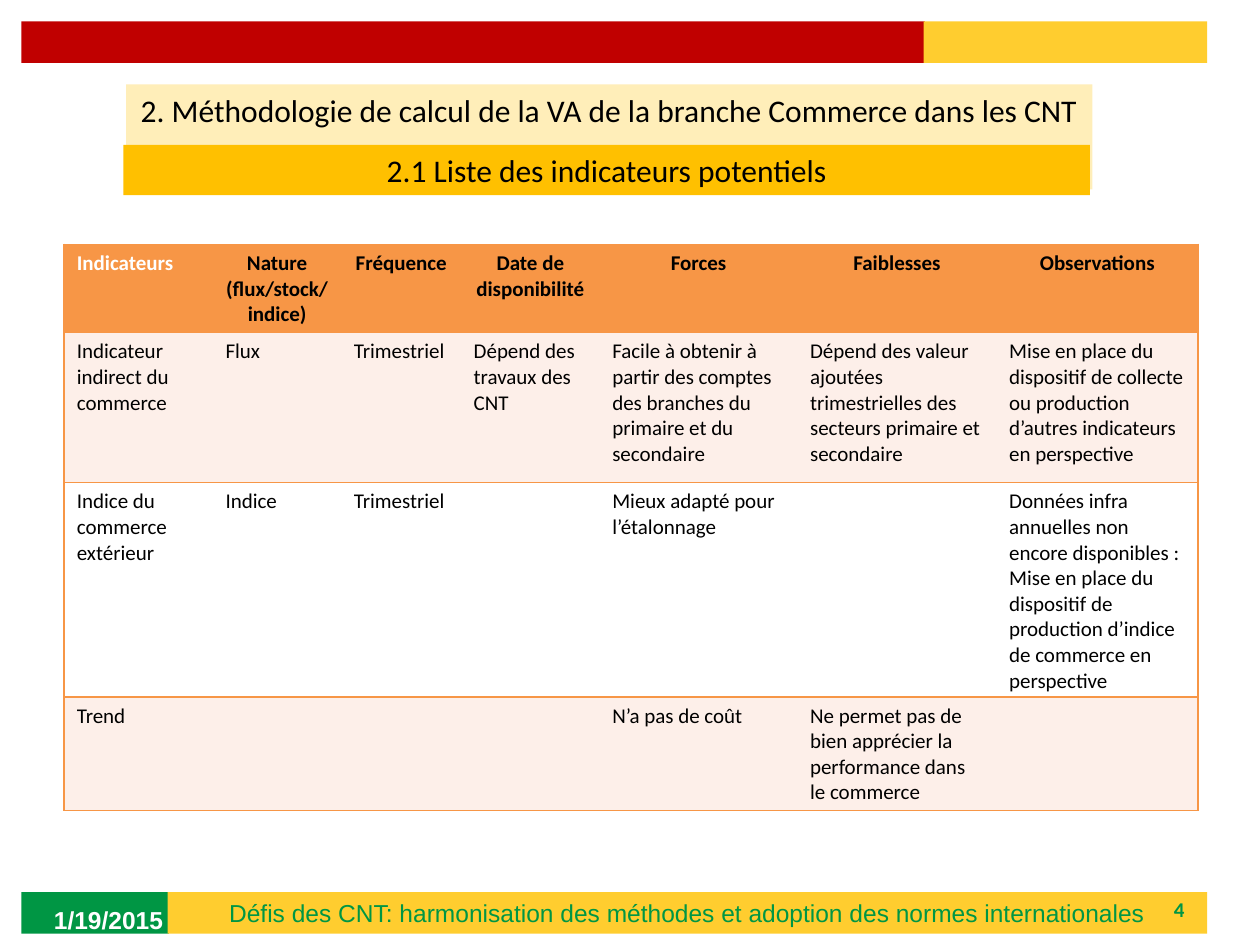
from lxml.etree import SubElement
from pptx import Presentation
from pptx.dml.color import RGBColor
from pptx.enum.shapes import MSO_SHAPE
from pptx.enum.text import MSO_ANCHOR, MSO_AUTO_SIZE, PP_ALIGN
from pptx.oxml.ns import qn
from pptx.util import Inches, Pt

GREEN = RGBColor(0x00, 0x96, 0x44)
YELLOW = RGBColor(0xFF, 0xCD, 0x2F)
RED = RGBColor(0xC0, 0x00, 0x00)
CREAM = RGBColor(0xFF, 0xEE, 0xB9)
AMBER = RGBColor(0xFF, 0xC0, 0x00)
ORANGE = RGBColor(0xF7, 0x96, 0x46)
BLUSH = RGBColor(0xFD, 0xEF, 0xE9)
WHITE = RGBColor(0xFF, 0xFF, 0xFF)
BLACK = RGBColor(0x00, 0x00, 0x00)

HEADING = {"name": "Calibri", "size": Pt(18), "bold": False}
FOOTER = {"name": "Arial", "size": Pt(14), "bold": False}
DATE = {"name": "Arial", "size": Pt(14), "bold": True}
HEADER = {"name": "Calibri", "size": Pt(12), "bold": True}
BODY = {"name": "Calibri", "size": Pt(12), "bold": False}

COLUMN_WIDTHS = (1.18, 1.02, 0.95, 1.1, 1.57, 1.58, 1.6)
ROW_HEIGHTS = (0.7, 1.19, 1.7, 0.9)
INDICATORS = (
    ("Indicateurs", "Nature (flux/stock/indice)", "Fréquence", "Date de disponibilité",
     "Forces", "Faiblesses", "Observations"),
    ("Indicateur indirect du commerce", "Flux", "Trimestriel", "Dépend des travaux des CNT",
     "Facile à obtenir à partir des comptes des branches du primaire et du secondaire",
     "Dépend des valeur ajoutées trimestrielles des secteurs primaire et secondaire",
     "Mise en place du dispositif de collecte ou production d’autres indicateurs en perspective"),
    ("Indice du commerce extérieur", "Indice", "Trimestriel", "",
     "Mieux adapté pour l’étalonnage", "",
     "Données infra annuelles non encore disponibles :\n"
     "Mise en place du dispositif de production d’indice de commerce en perspective"),
    ("Trend", "", "", "", "N’a pas de coût",
     "Ne permet pas de bien apprécier la performance dans le commerce", ""),
)


def write(frame, text, style, color, align=PP_ALIGN.LEFT):
    """Fill a text frame with paragraphs in one style."""
    frame.text = text
    for paragraph in frame.paragraphs:
        paragraph.alignment = align
        for name, value in style.items():
            setattr(paragraph.font, name, value)
        paragraph.font.color.rgb = color


def add_band(slide, box, color):
    """Add a plain coloured rectangle."""
    band = slide.shapes.add_shape(MSO_SHAPE.RECTANGLE, *map(Inches, box))
    band.shadow.inherit = False
    band.fill.solid()
    band.fill.fore_color.rgb = color
    band.line.fill.background()
    return band


def add_label(slide, box, text, style, color, align):
    """Add a vertically centred text box."""
    frame = slide.shapes.add_textbox(*map(Inches, box)).text_frame
    frame.word_wrap = True
    frame.vertical_anchor = MSO_ANCHOR.MIDDLE
    write(frame, text, style, color, align)


def write_heading(heading, text):
    """Set the text of a heading band."""
    frame = heading.text_frame
    frame.word_wrap = True
    frame.auto_size = MSO_AUTO_SIZE.SHAPE_TO_FIT_TEXT
    frame.vertical_anchor = MSO_ANCHOR.TOP
    write(frame, text, HEADING, BLACK, PP_ALIGN.CENTER)


def place_title(slide, box, text, color):
    """Move and format the title placeholder."""
    title = slide.shapes.title
    for side, length in zip(("left", "top", "width", "height"), box):
        setattr(title, side, Inches(length))
    title.fill.solid()
    title.fill.fore_color.rgb = color
    write_heading(title, text)


def set_borders(cell, visible_sides):
    """Draw the named cell sides in orange and hide the others."""
    properties = cell._tc.get_or_add_tcPr()
    for side in "LRTB":
        border = SubElement(properties, qn(f"a:ln{side}"), w=str(Pt(1)))
        if side in visible_sides:
            fill = SubElement(border, qn("a:solidFill"))
            SubElement(fill, qn("a:srgbClr"), val=str(ORANGE))
        else:
            SubElement(border, qn("a:noFill"))


def add_indicator_table(slide, left, top):
    """Add the table of potential indicators."""
    table = slide.shapes.add_table(
        len(INDICATORS), len(COLUMN_WIDTHS), Inches(left), Inches(top),
        Inches(sum(COLUMN_WIDTHS)), Inches(sum(ROW_HEIGHTS))).table
    table.horz_banding = False
    for column, width in zip(table.columns, COLUMN_WIDTHS):
        column.width = Inches(width)
    last = len(COLUMN_WIDTHS) - 1
    for r, (texts, height) in enumerate(zip(INDICATORS, ROW_HEIGHTS)):
        table.rows[r].height = Inches(height)
        row_fill = ORANGE if r == 0 else BLUSH if r % 2 else WHITE
        for c, text in enumerate(texts):
            cell = table.cell(r, c)
            set_borders(cell, "TB" + {0: "L", last: "R"}.get(c, ""))
            cell.fill.solid()
            cell.fill.fore_color.rgb = row_fill
            write(cell.text_frame, text, BODY if r else HEADER,
                  WHITE if r == c == 0 else BLACK,
                  PP_ALIGN.CENTER if r == 0 and c else PP_ALIGN.LEFT)


def main():
    """Build the slide and save it."""
    deck = Presentation()
    deck.slide_width, deck.slide_height = Inches(10), Inches(7.5)
    slide = deck.slides.add_slide(deck.slide_layouts[5])

    add_band(slide, (0.17, 7.08, 1.17, 0.33), GREEN)
    footer = add_band(slide, (1.33, 7.08, 8.25, 0.33), YELLOW)
    write(footer.text_frame,
          "Défis des CNT: harmonisation des méthodes et adoption des normes internationales",
          FOOTER, GREEN, PP_ALIGN.CENTER)
    add_label(slide, (7.17, 7.08, 2.33, 0.27), "4", HEADER, GREEN, PP_ALIGN.RIGHT)
    add_band(slide, (0.17, 0.17, 7.17, 0.33), RED)
    add_band(slide, (7.33, 0.17, 2.25, 0.33), YELLOW)
    add_label(slide, (0.33, 7.1, 2.33, 0.4), "1/19/2015", DATE, WHITE, PP_ALIGN.LEFT)

    place_title(slide, (1, 0.67, 7.67, 0.4),
                "2. Méthodologie de calcul de la VA de la branche Commerce dans les CNT", CREAM)
    subtitle = add_band(slide, (0.98, 1.15, 7.67, 0.4), AMBER)
    write_heading(subtitle, "2.1 Liste des indicateurs potentiels")
    add_indicator_table(slide, 0.51, 1.94)
    deck.save("out.pptx")


if __name__ == "__main__":
    main()
